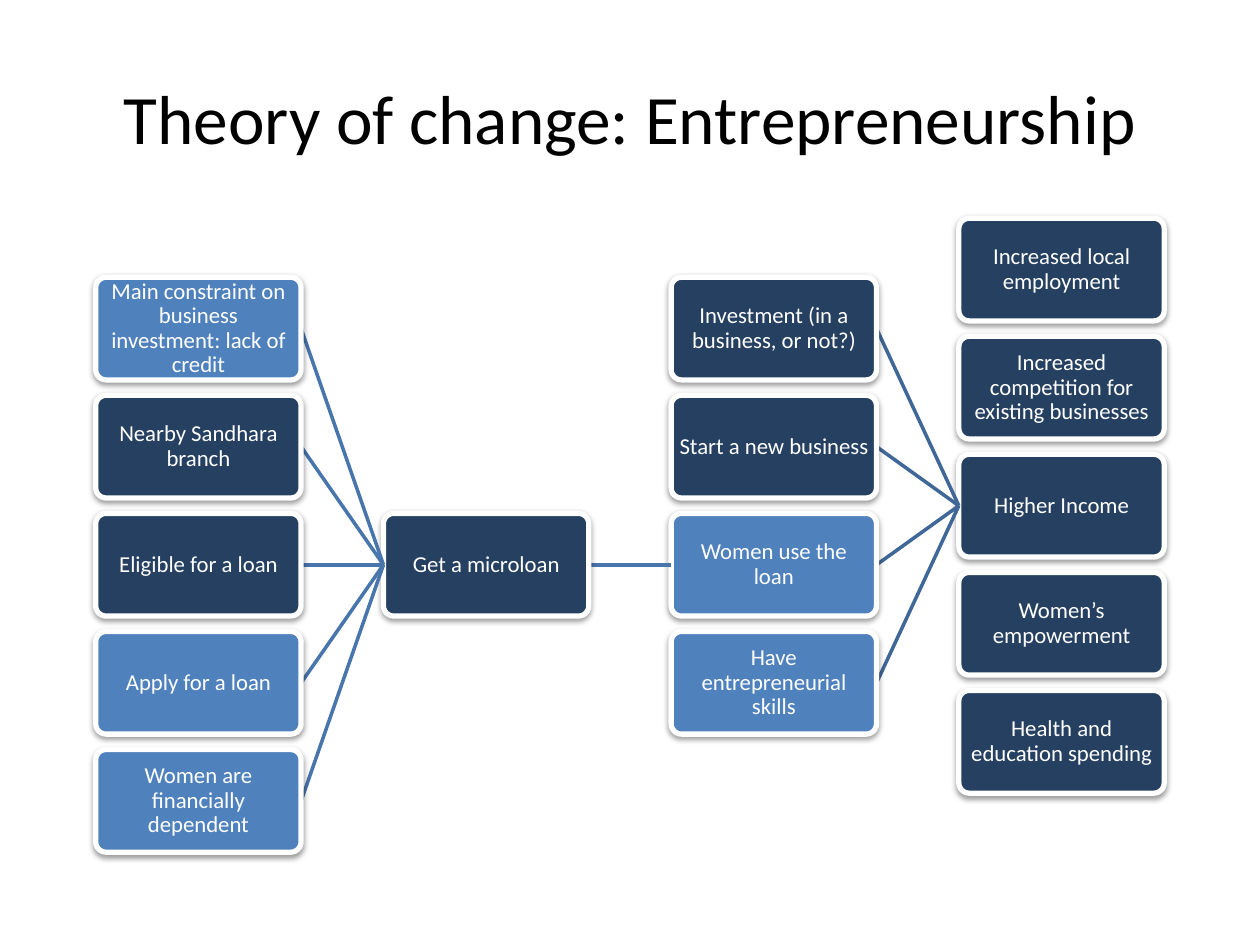
"""Build the entrepreneurship theory-of-change slide."""
from lxml import etree
from pptx import Presentation
from pptx import util as u
from pptx.dml.color import RGBColor
from pptx.enum import shapes, text
from pptx.oxml.ns import qn

TITLE = "Theory of change: Entrepreneurship"
DARK, LIGHT, WHITE, BLACK = "254061", "4F81BD", "FFFFFF", "000000"
COLUMNS = [
    {"first_row": 0, "target": 0, "link": "4875AC", "steps": [
        ("Main constraint on business investment: lack of credit", LIGHT),
        ("Nearby Sandhara branch", DARK),
        ("Eligible for a loan", DARK),
        ("Apply for a loan", LIGHT),
        ("Women are financially dependent", LIGHT)]},
    {"first_row": 2, "target": 2, "link": "4875AC", "steps": [
        ("Get a microloan", DARK)]},
    {"first_row": 0, "target": 2, "link": "3F6797", "steps": [
        ("Investment (in a business, or not?)", DARK),
        ("Start a new business", DARK),
        ("Women use the loan", LIGHT),
        ("Have entrepreneurial skills", LIGHT)]},
    {"first_row": -0.5, "target": None, "link": None, "steps": [
        ("Increased local employment", DARK),
        ("Increased competition for existing businesses", DARK),
        ("Higher Income", DARK),
        ("Women’s empowerment", DARK),
        ("Health and education spending", DARK)]},
]
LEFT, TOP, WIDTH, HEIGHT = 1.93, 5.59, 4.14, 2.07
COLUMN_STEP, ROW_STEP = 5.8, 2.38


def color(value):
    return RGBColor.from_string(value)


def write(holder, words, size=13, ink=WHITE, inset=0.09, spacing=0.9):
    frame = holder.text_frame
    frame.word_wrap = True
    frame.vertical_anchor = text.MSO_ANCHOR.MIDDLE
    frame.margin_left = frame.margin_right = u.Cm(inset)
    frame.margin_top = frame.margin_bottom = u.Cm(inset)
    paragraph = frame.paragraphs[0]
    paragraph.alignment = text.PP_ALIGN.CENTER
    paragraph.line_spacing = spacing
    run = paragraph.add_run()
    run.text = words
    run.font.name, run.font.size = "Calibri", u.Pt(size)
    run.font.color.rgb = color(ink)


def add_shadow(step):
    step.shadow.inherit = False
    effects = step.element.spPr.find(qn("a:effectLst"))
    shadow = etree.SubElement(effects, qn("a:outerShdw"), blurRad="40000",
                              dist="20000", dir="5400000", rotWithShape="0")
    ink = etree.SubElement(shadow, qn("a:srgbClr"), val=BLACK)
    etree.SubElement(ink, qn("a:alpha"), val="38000")


def add_step(slide, words, fill, column, row):
    step = slide.shapes.add_shape(
        shapes.MSO_SHAPE.ROUNDED_RECTANGLE,
        u.Cm(LEFT + column * COLUMN_STEP), u.Cm(TOP + row * ROW_STEP),
        u.Cm(WIDTH), u.Cm(HEIGHT))
    step.adjustments[0] = 0.1
    step.fill.solid()
    step.fill.fore_color.rgb = color(fill)
    step.line.color.rgb = color(WHITE)
    step.line.width = u.Pt(3)
    add_shadow(step)
    write(step, words)
    return step


def add_link(slide, target, ink):
    link = slide.shapes.add_connector(shapes.MSO_CONNECTOR.STRAIGHT, 0, 0, 0, 0)
    link.begin_connect(target, 1)
    link.line.color.rgb = color(ink)
    link.line.width = u.Pt(2)
    etree.SubElement(link.element.spPr, qn("a:effectLst"))
    return link


def main():
    deck = Presentation()
    deck.slide_width, deck.slide_height = u.Cm(25.4), u.Cm(19.05)
    slide = deck.slides.add_slide(deck.slide_layouts[6])
    title = slide.shapes.add_textbox(u.Cm(1.27), u.Cm(0.76), u.Cm(22.86), u.Cm(3.18))
    write(title, TITLE, size=39.6, ink=BLACK, inset=0.13, spacing=1.0)

    next_steps = []
    for column, group in reversed(list(enumerate(COLUMNS))):
        steps = []
        for row, (words, fill) in enumerate(group["steps"], 0):
            link = None
            if group["link"]:
                link = add_link(slide, next_steps[group["target"]], group["link"])
            step = add_step(slide, words, fill, column, group["first_row"] + row)
            if link is not None:
                link.end_connect(step, 3)
            steps.append(step)
        next_steps = steps
    deck.save("out.pptx")


if __name__ == "__main__":
    main()
